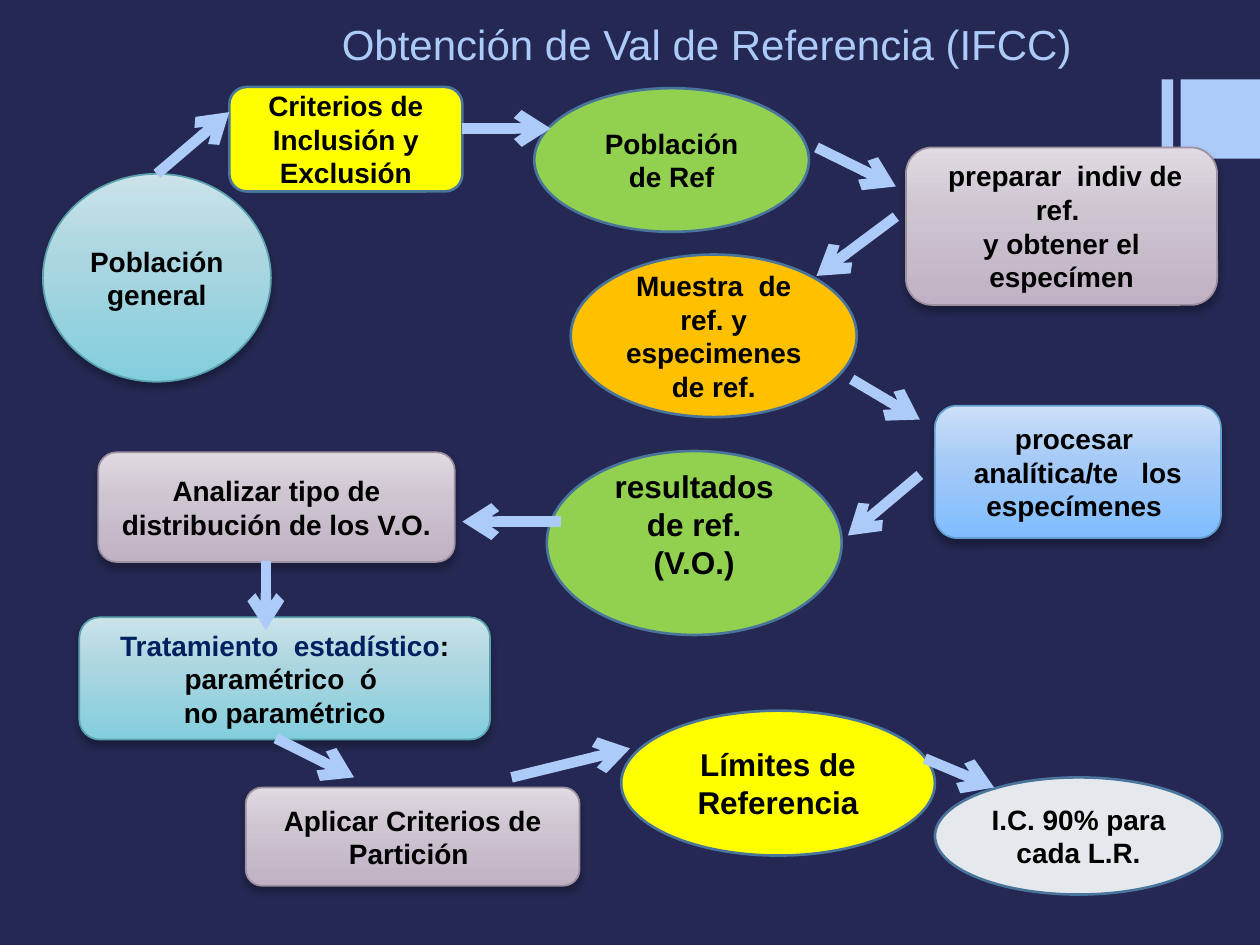
from lxml import etree
from pptx import Presentation
from pptx.dml.color import RGBColor
from pptx.enum.shapes import MSO_CONNECTOR, MSO_SHAPE
from pptx.enum.text import MSO_ANCHOR, PP_ALIGN
from pptx.oxml.ns import qn
from pptx.util import Inches, Pt

BOX, OVAL, RECTANGLE = MSO_SHAPE.ROUNDED_RECTANGLE, MSO_SHAPE.OVAL, MSO_SHAPE.RECTANGLE
STRAIGHT = MSO_CONNECTOR.STRAIGHT
CENTER, MIDDLE = PP_ALIGN.CENTER, MSO_ANCHOR.MIDDLE
TOP = 0

NAVY = RGBColor(0x24, 0x28, 0x52)
SKY = RGBColor(0xAC, 0xCB, 0xF9)
BLACK = RGBColor(0, 0, 0)
DARK_BLUE = RGBColor(0x00, 0x20, 0x60)
STEEL = RGBColor(0x49, 0x74, 0x9B)
YELLOW = RGBColor(0xFF, 0xFF, 0x00)
GREEN = RGBColor(0x92, 0xD0, 0x50)
ORANGE = RGBColor(0xFF, 0xC0, 0x00)
PALE = RGBColor(0xE5, 0xE9, 0xEE)

# Gradient styles: outline, then the colours at the three stops
STOPS = (0, 41, 100)
MAUVE = (RGBColor(0x9D, 0x90, 0xA0), ("E0DBE2", "CEC5D1", "C0B1C4"))
TEAL = (RGBColor(0x5A, 0xA2, 0xAE), ("CBE3E9", "ABD6E0", "83CEDD"))
BLUE = (RGBColor(0x62, 0x9D, 0xD1), ("CDE0F7", "A7CBF7", "80BCFF"))

TITLE = "Obtención de Val de Referencia (IFCC)"

# name: (geometry, (left, top, width, height), fill, paragraphs, text format)
STEPS = {
    "procesar": (BOX, (7.42, 3.22, 2.27, 1.05), BLUE,
                 ["procesar  analítica/te   los especímenes "], {}),
    "preparar": (BOX, (7.19, 1.17, 2.47, 1.25), MAUVE,
                 [" preparar  indiv de ref. ", "y obtener el especímen"], {}),
    "analizar": (BOX, (0.78, 3.59, 2.83, 0.87), MAUVE,
                 ["Analizar tipo de distribución de los V.O."], {}),
    "tratamiento": (BOX, (0.63, 4.9, 3.26, 0.97), TEAL,
                    [[("Tratamiento  estadístico", DARK_BLUE), (": paramétrico  ó ", BLACK)],
                     "no paramétrico"], {}),
    "particion": (BOX, (1.95, 6.25, 2.65, 0.78), MAUVE,
                  ["Aplicar Criterios de Partición "], {}),
    "general": (OVAL, (0.34, 1.38, 1.81, 1.65), TEAL, ["Población general"], {}),
    "criterios": (BOX, (1.82, 0.69, 1.85, 0.83), YELLOW,
                  ["Criterios de Inclusión y Exclusión"], {}),
    "poblacion_ref": (OVAL, (4.24, 0.7, 2.18, 1.14), GREEN, ["Población de Ref"], {}),
    "muestra": (OVAL, (4.53, 2.02, 2.27, 1.29), ORANGE,
                ["Muestra  de ref. y especimenes de ref."], {}),
    "limites": (OVAL, (4.93, 5.64, 2.49, 1.15), YELLOW,
                ["Límites de Referencia"], {"size": 18}),
    "intervalo": (OVAL, (7.42, 6.17, 2.28, 0.93), PALE, ["I.C. 90% para cada L.R."], {}),
    "resultados": (OVAL, (4.34, 3.58, 2.34, 1.46), GREEN,
                   ["resultados de ref. (V.O.)"], {"size": 18, "bottom_margin": 0.35}),
}

# (start x, start y, end x, end y)
FIRST_ARROW = (1.25, 1.38, 1.82, 0.89)
ARROWS = [
    (3.67, 1.02, 4.37, 1.02),
    (6.48, 1.17, 7.11, 1.48),
    (7.11, 1.72, 6.48, 2.19),
    (6.76, 3.01, 7.3, 3.33),
    (7.3, 3.77, 6.73, 4.25),
    (4.45, 4.14, 3.67, 4.14),
    (2.11, 4.45, 2.11, 5),
    (2.19, 5.86, 2.81, 6.17),
    (4.06, 6.17, 5, 5.94),
    (7.34, 6.02, 7.89, 6.25),
]


def inches(values):
    return [Inches(value) for value in values]


def write_text(shape, paragraphs, size=16, bold=True, color=BLACK, bottom_margin=0.05):
    """Fill a shape; a paragraph is a string or a list of (text, colour) runs."""
    frame = shape.text_frame
    frame.word_wrap = True
    frame.vertical_anchor = MIDDLE
    frame.margin_bottom = Inches(bottom_margin)
    for index, content in enumerate(paragraphs):
        paragraph = frame.add_paragraph() if index else frame.paragraphs[0]
        paragraph.alignment = CENTER
        runs = [(content, color)] if isinstance(content, str) else content
        for text, run_color in runs:
            run = paragraph.add_run()
            run.text = text
            run.font.name = "Arial"
            run.font.size = Pt(size)
            run.font.bold = bold
            run.font.color.rgb = run_color


def add_color(parent, value):
    return etree.SubElement(parent, qn("a:srgbClr"), val=value)


def set_gradient(shape, colors):
    shape.fill.gradient()
    shape.fill.gradient_angle = 270
    stop_list = shape._element.spPr.find(qn("a:gradFill")).find(qn("a:gsLst"))
    for stop in list(stop_list):
        stop_list.remove(stop)
    for position, color in zip(STOPS, colors):
        add_color(etree.SubElement(stop_list, qn("a:gs"), pos=str(position * 1000)), color)


def add_soft_shadow(shape):
    effects = shape._element.spPr.find(qn("a:effectLst"))
    shadow = etree.SubElement(effects, qn("a:outerShdw"), blurRad=str(Pt(4)),
                              dist=str(Pt(3)), dir="5400000", rotWithShape="0")
    etree.SubElement(add_color(shadow, "000000"), qn("a:alpha"), val="28000")


def add_step(slide, geometry, place, fill, paragraphs, text_format):
    shape = slide.shapes.add_shape(geometry, *inches(place))
    shape.shadow.inherit = False
    if isinstance(fill, RGBColor):
        shape.fill.solid()
        shape.fill.fore_color.rgb = fill
        outline, width = STEEL, 1.5
    else:
        outline, colors = fill
        width = 1
        set_gradient(shape, colors)
        add_soft_shadow(shape)
    shape.line.color.rgb = outline
    shape.line.width = Pt(width)
    write_text(shape, paragraphs, **text_format)
    return shape


def add_arrow(slide, ends):
    arrow = slide.shapes.add_connector(STRAIGHT, *inches(ends))
    arrow.line.color.rgb = SKY
    arrow.line.width = Pt(6)
    properties = arrow._element.spPr
    etree.SubElement(properties.find(qn("a:ln")), qn("a:tailEnd"), type="arrow")
    etree.SubElement(properties, qn("a:effectLst"))
    return arrow


def main():
    presentation = Presentation()
    presentation.slide_width, presentation.slide_height = inches((10, 7.5))
    slide = presentation.slides.add_slide(presentation.slide_layouts[6])
    slide.background.fill.solid()
    slide.background.fill.fore_color.rgb = NAVY

    for left, width in ((9.22, 0.09), (9.37, 0.63)):
        block = slide.shapes.add_shape(RECTANGLE, *inches((left, 0.63, width, 0.63)))
        block.shadow.inherit = False
        block.fill.solid()
        block.fill.fore_color.rgb = SKY
        block.line.fill.background()

    title = slide.shapes.add_textbox(*inches((1.61, 0.02, 8, 0.66)))
    write_text(title, [TITLE], size=24, bold=False, color=SKY)

    steps = {name: add_step(slide, *step) for name, step in STEPS.items()}
    add_arrow(slide, FIRST_ARROW).begin_connect(steps["general"], TOP)
    for ends in ARROWS:
        add_arrow(slide, ends)

    presentation.save("out.pptx")


if __name__ == "__main__":
    main()
